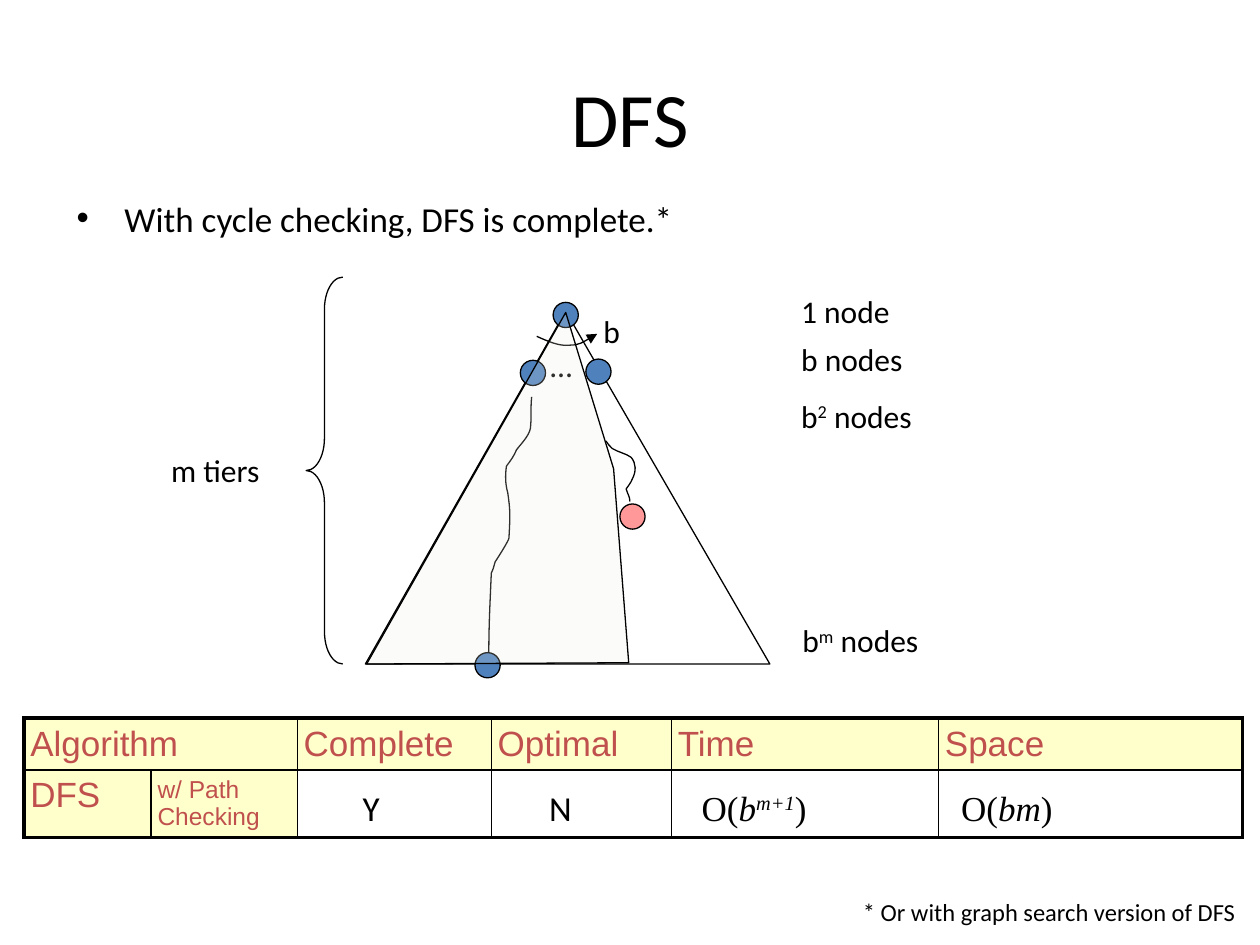
from dataclasses import dataclass, replace
from typing import NamedTuple

from lxml.etree import SubElement
from pptx import Presentation
from pptx.dml.color import RGBColor
from pptx.enum.shapes import MSO_SHAPE
from pptx.enum.text import MSO_ANCHOR, MSO_AUTO_SIZE, PP_ALIGN
from pptx.oxml.ns import qn
from pptx.util import Inches, Pt


@dataclass(frozen=True)
class Theme:
    ink: str = "000000"
    node: str = "4F81BD"
    goal: str = "FF9999"
    head: str = "C0504D"
    cream: str = "FFFFCC"
    wedge: str = "EEECE1"
    body: str = "Calibri"
    sans: str = "Arial"
    serif: str = "Times New Roman"
    title: int = 44
    large: int = 20
    label: int = 18
    small: int = 14
    line: float = 0.75
    rule: float = 1
    frame: float = 2.25


T = Theme()
Point = tuple[float, float]


class Run(NamedTuple):
    text: str
    italic: bool = False
    raised: bool = False


@dataclass(frozen=True)
class Label:
    left: float
    top: float
    width: float
    height: float
    runs: tuple[Run, ...]
    size: int = T.label
    font: str = T.body


class Disc(NamedTuple):
    left: float
    top: float
    color: str = T.node


def rgb(code: str) -> RGBColor:
    return RGBColor.from_string(code)


def add_runs(para, runs: tuple[Run, ...], size: int, font: str, color: str = T.ink) -> None:
    for item in runs:
        run = para.add_run()
        run.text = item.text
        face = run.font
        face.size, face.name, face.italic = Pt(size), font, item.italic
        face.color.rgb = rgb(color)
        if item.raised:
            face._element.set("baseline", "30000")


def add_label(slide, label: Label):
    spot = map(Inches, (label.left, label.top, label.width, label.height))
    frame = slide.shapes.add_textbox(*spot).text_frame
    frame.word_wrap = True
    frame.auto_size = MSO_AUTO_SIZE.NONE
    add_runs(frame.paragraphs[0], label.runs, label.size, label.font)
    return frame


def outline(shape) -> None:
    shape.shadow.inherit = False
    shape.line.color.rgb = rgb(T.ink)
    shape.line.width = Pt(T.line)


def add_disc(slide, disc: Disc) -> None:
    spot = map(Inches, (disc.left, disc.top, 0.2, 0.2))
    shape = slide.shapes.add_shape(MSO_SHAPE.OVAL, *spot)
    outline(shape)
    shape.fill.solid()
    shape.fill.fore_color.rgb = rgb(disc.color)


def add_trace(slide, points: list[Point], close: bool = False):
    spots = [(Inches(x), Inches(y)) for x, y in points]
    pen = slide.shapes.build_freeform(*spots[0])
    pen.add_line_segments(spots[1:], close=close)
    shape = pen.convert_to_shape()
    outline(shape)
    shape.fill.background()
    return shape


def add_curve(slide, points: list[Point]):
    """Draw cubic curves: a start, then two handles and an end for each."""
    shape = add_trace(slide, points)
    steps = shape._element.xpath(".//a:lnTo")
    for first, *rest in zip(steps[::3], steps[1::3], steps[2::3]):
        first.addprevious(curve := first.makeelement(qn("a:cubicBezTo")))
        for step in (first, *rest):
            curve.append(step[0])
            step.getparent().remove(step)
    return shape


def set_edge(props, side: str, width: float) -> None:
    edge = SubElement(props, qn(f"a:ln{side}"), w=str(Pt(width)))
    fill = SubElement(edge, qn("a:solidFill"))
    SubElement(fill, qn("a:srgbClr"), val=T.ink)


def add_grid(slide) -> None:
    widths = (1.01, 1.16, 1.54, 1.43, 2.12, 2.41)
    heights = (0.41, 0.53)
    rows = (("Algorithm", "", "Complete", "Optimal", "Time", "Space"),
            ("DFS", "w/ Path Checking", "", "", "", ""))
    spot = map(Inches, (0.19, 5.7, sum(widths), sum(heights)))
    grid = slide.shapes.add_table(len(rows), len(widths), *spot).table
    grid.first_row = grid.horz_banding = False
    for col, width in zip(grid.columns, widths):
        col.width = Inches(width)
    for row, height in zip(grid.rows, heights):
        row.height = Inches(height)
    grid.cell(0, 0).merge(grid.cell(0, 1))
    for r, row in enumerate(rows):
        for c, text in enumerate(row):
            cell = grid.cell(r, c)
            cell.margin_left = cell.margin_top = cell.margin_bottom = Inches(0.05)
            cell.margin_right = 0
            outer = {"L": c == 0, "R": c == len(row) - 1,
                     "T": r == 0, "B": r == len(rows) - 1}
            for side, thick in outer.items():
                set_edge(cell._tc.get_or_add_tcPr(), side, T.frame if thick else T.rule)
            if r == 0 or text:
                cell.fill.solid()
                cell.fill.fore_color.rgb = rgb(T.cream)
            else:
                cell.fill.background()
            if text:
                size = T.small if (r, c) == (1, 1) else T.large
                add_runs(cell.text_frame.paragraphs[0], (Run(text),), size, T.sans, T.head)


def add_heading(slide) -> None:
    title = add_label(slide, Label(0.5, 0.3, 9, 1.25, (Run("DFS"),), T.title))
    title.vertical_anchor = MSO_ANCHOR.MIDDLE
    title.paragraphs[0].alignment = PP_ALIGN.CENTER
    claim = (Run("With cycle checking, DFS is complete.*"),)
    para = add_label(slide, Label(0.51, 1.58, 9, 0.5, claim, T.large)).paragraphs[0]
    para.line_spacing = 0.8
    props = para._p.get_or_add_pPr()
    props.set("marL", str(Inches(0.38)))
    props.set("indent", str(Inches(-0.38)))
    SubElement(props, qn("a:buFont"), typeface=T.sans)
    SubElement(props, qn("a:buChar"), char="•")


def add_values(slide) -> None:
    base = Label(2.78, 6.19, 0.67, 0.43, (Run("Y"),), T.large)
    time = (Run("O("), Run("b", True), Run("m+1", True, True), Run(")"))
    space = (Run("O("), Run("bm", True), Run(")"))
    for label in (base, replace(base, left=4.26, runs=(Run("N"),)),
                  replace(base, left=5.47, width=2.08, runs=time, font=T.serif),
                  replace(base, left=7.53, width=1.5, runs=space, font=T.serif)):
        add_label(slide, label)


def add_tree(slide) -> None:
    add_trace(slide, [(2.9, 5.27), (6.11, 5.27), (4.49, 2.47)], close=True)
    for disc in (Disc(4.39, 2.4), Disc(4.13, 2.86), Disc(4.65, 2.85),
                 Disc(3.77, 5.18), Disc(4.92, 4, T.goal)):
        add_disc(slide, disc)
    nodes = Run(" nodes")
    for label in (Label(4.27, 2.7, 0.3, 0.4, (Run("…"),)),
                  Label(4.69, 2.43, 0.33, 0.4, (Run("b"),)),
                  Label(6.26, 2.27, 1.22, 0.4, (Run("1 node"),)),
                  Label(6.26, 2.65, 1.22, 0.4, (Run("b nodes"),)),
                  Label(6.26, 3.1, 1.22, 0.4, (Run("b"), Run("2", raised=True), nodes)),
                  Label(6.27, 4.88, 1.6, 0.4, (Run("b"), Run("m", raised=True), nodes)),
                  Label(1.26, 3.53, 1.38, 0.4, (Run("m tiers"),))):
        add_label(slide, label)
    arc = add_curve(slide, [(4.26, 2.67), (4.35, 2.71), (4.44, 2.75), (4.52, 2.74),
                            (4.6, 2.74), (4.67, 2.69), (4.74, 2.65)])
    SubElement(arc.line._get_or_add_ln(), qn("a:tailEnd"), type="triangle")
    add_curve(slide, [(4.22, 3.15), (4.21, 3.24), (4.22, 3.32), (4.21, 3.4),
                      (4.2, 3.46), (4.13, 3.53), (4.1, 3.57), (4.08, 3.62),
                      (4.05, 3.66), (4.02, 3.7), (4.01, 3.77), (4.01, 3.84),
                      (4.03, 3.91), (4.05, 4.05), (4.05, 4.08), (4.04, 4.27),
                      (4.04, 4.29), (3.95, 4.43), (3.93, 4.46), (3.91, 4.53),
                      (3.92, 4.5), (3.9, 4.55), (3.89, 4.78), (3.88, 4.96), (3.88, 5.18)])
    add_curve(slide, [(4.81, 3.5), (4.82, 3.52), (4.84, 3.54), (4.86, 3.56),
                      (4.91, 3.59), (4.97, 3.6), (5.01, 3.63), (5.05, 3.68),
                      (5.05, 3.74), (5.02, 3.8), (5.01, 3.83), (4.97, 3.88),
                      (4.97, 3.88), (4.98, 3.92), (5, 3.94), (5, 3.98)])
    spot = map(Inches, (2.43, 2.2, 0.29, 3.07))
    brace = slide.shapes.add_shape(MSO_SHAPE.LEFT_BRACE, *spot)
    outline(brace)
    brace.fill.background()
    brace.adjustments[0] = 0.88
    wedge = add_trace(slide, [(2.91, 5.27), (4.99, 5.26), (4.87, 3.72), (4.49, 2.48)], close=True)
    wedge.fill.solid()
    wedge.fill.fore_color.rgb = rgb(T.wedge)
    tint = wedge._element.spPr.find(qn("a:solidFill"))[0]
    SubElement(tint, qn("a:alpha"), val="20000")


def main() -> None:
    deck = Presentation()
    deck.slide_width, deck.slide_height = Inches(10), Inches(7.5)
    slide = deck.slides.add_slide(deck.slide_layouts[6])
    for draw in (add_heading, add_grid, add_values, add_tree):
        draw(slide)
    note = (Run("* Or with graph search version of DFS"),)
    add_label(slide, Label(6.75, 7.07, 3.25, 0.34, note, T.small))
    deck.save("out.pptx")


if __name__ == "__main__":
    main()
